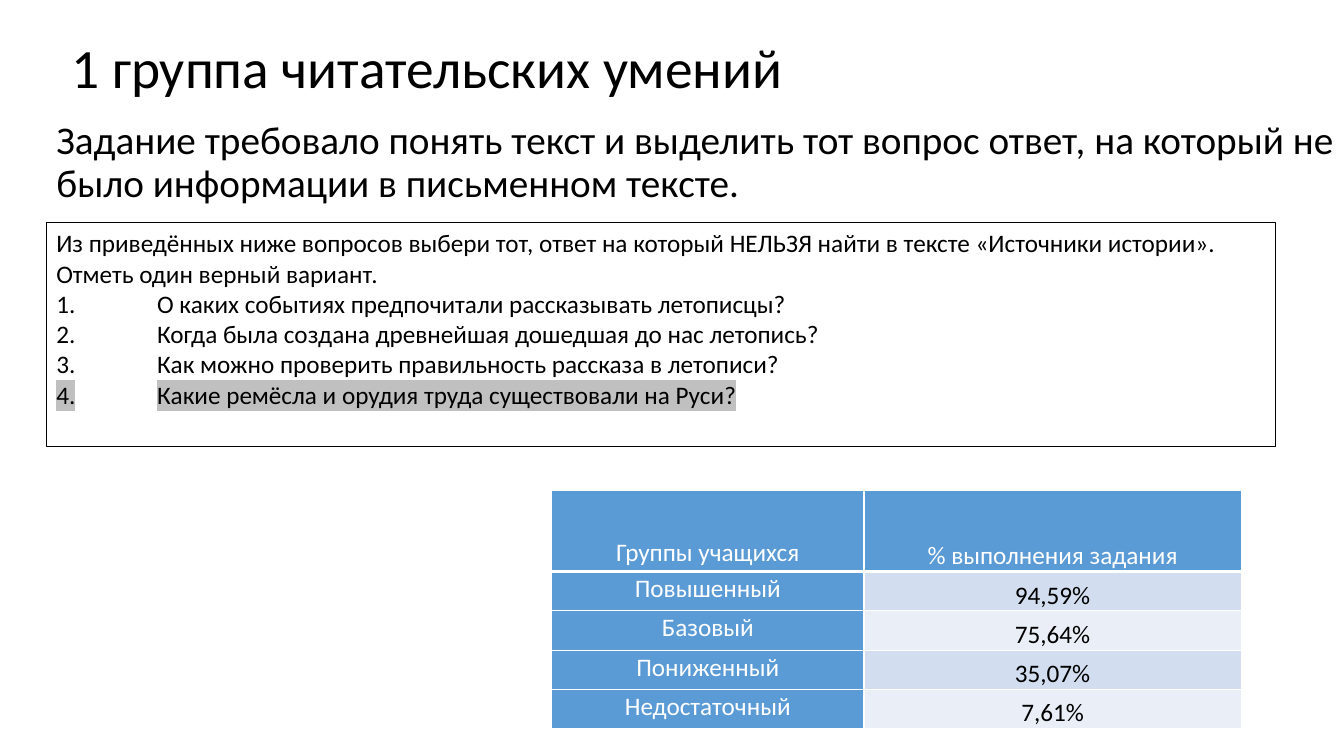
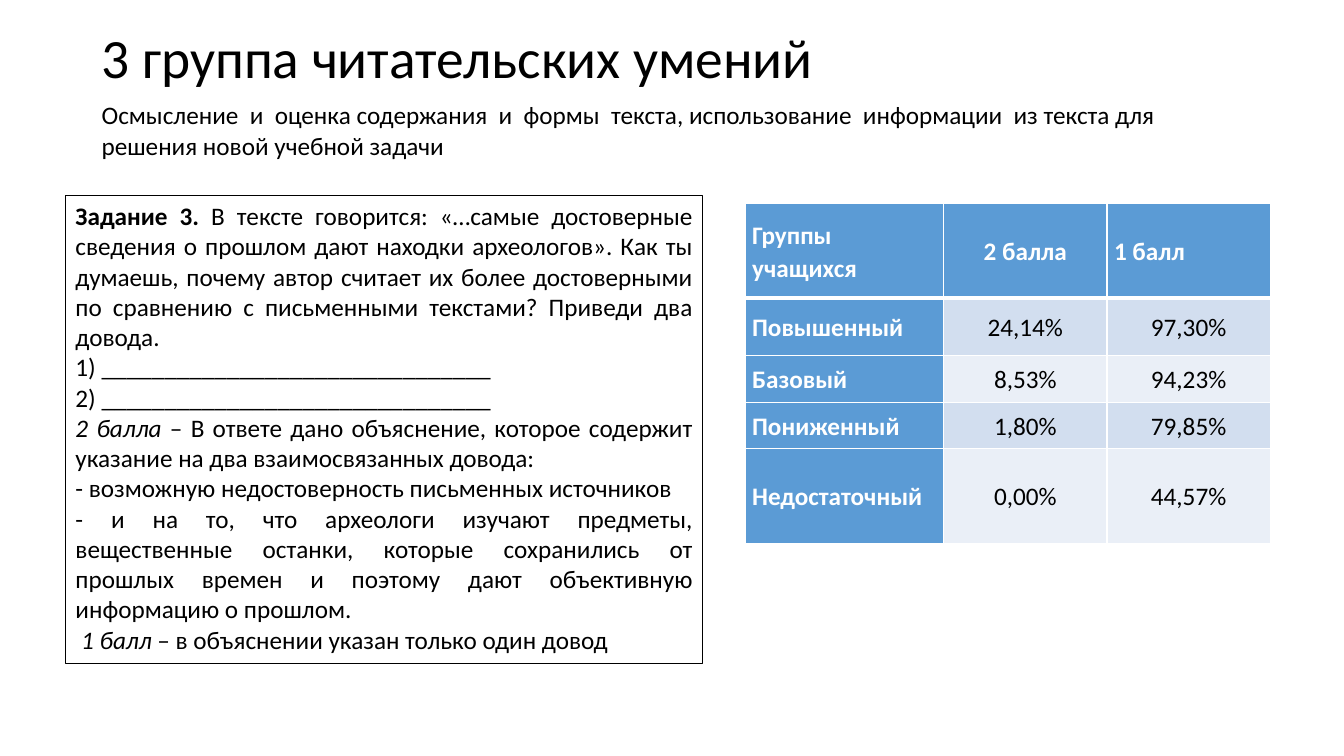
from lxml.etree import SubElement
from pptx import Presentation
from pptx.dml.color import RGBColor
from pptx.enum.text import MSO_ANCHOR, MSO_AUTO_SIZE, PP_ALIGN
from pptx.oxml.ns import qn
from pptx.util import Inches, Pt

FONT = "Calibri"
BLACK, WHITE, BLUE, GREY = "000000", "FFFFFF", "5B9BD5", "C0C0C0"
BANDS = ("D2DEEF", "EAEFF7")
LEFT, CENTER, JUSTIFY = PP_ALIGN.LEFT, PP_ALIGN.CENTER, PP_ALIGN.JUSTIFY
TOP, MIDDLE, BOTTOM = MSO_ANCHOR.TOP, MSO_ANCHOR.MIDDLE, MSO_ANCHOR.BOTTOM


def rgb(value):
    """Turn a hex string into a colour."""
    return RGBColor.from_string(value)


def style(para, size=18, color=BLACK, align=LEFT, bold=False):
    """Set the font and alignment of a paragraph."""
    para.alignment = align
    para.font.name = FONT
    para.font.size = Pt(size)
    para.font.bold = bold
    para.font.color.rgb = rgb(color)


def place(shape, box):
    """Move a shape to a box given in inches."""
    shape.left, shape.top, shape.width, shape.height = map(Inches, box)


def indent(para, left, first):
    """Set the left margin and first line indent of a paragraph."""
    properties = para._p.get_or_add_pPr()
    properties.set("marL", str(Inches(left)))
    properties.set("indent", str(Inches(first)))


def highlight(span, color):
    """Shade the background of a run."""
    span.font.color.rgb = rgb(BLACK)
    mark = SubElement(span._r.get_or_add_rPr(), qn("a:highlight"))
    SubElement(mark, qn("a:srgbClr"), val=color)


def add_title(page, text, box):
    """Fill the title placeholder."""
    title = page.shapes.title
    place(title, box)
    frame = title.text_frame
    frame.auto_size = MSO_AUTO_SIZE.NONE
    frame.vertical_anchor = MIDDLE
    frame.text = text
    para = frame.paragraphs[0]
    style(para, 39.6)
    para.line_spacing = 0.9


def add_lead(page, text, box):
    """Fill the body placeholder with one plain paragraph."""
    body = page.placeholders[1]
    place(body, box)
    frame = body.text_frame
    frame.auto_size = MSO_AUTO_SIZE.NONE
    frame.text = text
    para = frame.paragraphs[0]
    style(para, 28)
    para.line_spacing = 0.9
    para.space_before = Pt(10)
    indent(para, 0, 0)
    para._p.get_or_add_pPr().insert_element_before(
        para._p.makeelement(qn("a:buNone"), {}), "a:tabLst", "a:defRPr", "a:extLst")


def add_text(page, lines, box, align=LEFT, outlined=False):
    """Add a text box from lines, each a list of (text, emphasis) spans."""
    shape = page.shapes.add_textbox(*map(Inches, box))
    if outlined:
        shape.line.color.rgb = rgb(BLACK)
        shape.line.width = Pt(0.75)
    frame = shape.text_frame
    frame.word_wrap = True
    for number, line in enumerate(lines):
        para = frame.add_paragraph() if number else frame.paragraphs[0]
        style(para, align=align)
        for text, emphasis in line:
            span = para.add_run()
            span.text = text
            if emphasis == "bold":
                span.font.bold = True
            elif emphasis == "italic":
                span.font.italic = True
            elif emphasis == "shade":
                highlight(span, GREY)
    return frame


def add_borders(cell, row):
    """Draw white cell borders, thicker under the header row."""
    widths = {"L": 1, "R": 1, "T": 3 if row == 1 else 1, "B": 1 if row else 3}
    for side, width in widths.items():
        line = SubElement(cell._tc.get_or_add_tcPr(), qn(f"a:ln{side}"), w=str(Pt(width)))
        SubElement(SubElement(line, qn("a:solidFill")), qn("a:srgbClr"), val=WHITE)


def add_results(page, rows, left, top, widths, heights, layout):
    """Add a results table; layout gives anchor, alignment and boldness by cell."""
    frame = page.shapes.add_table(len(rows), len(widths), Inches(left), Inches(top),
                                  Inches(sum(widths)), Inches(sum(heights)))
    table = frame.table
    for column, width in zip(table.columns, widths):
        column.width = Inches(width)
    for r, (values, height) in enumerate(zip(rows, heights)):
        table.rows[r].height = Inches(height)
        for c, value in enumerate(values):
            cell = table.cell(r, c)
            label = r == 0 or c == 0
            anchor, align, bold = layout(r, c)
            add_borders(cell, r)
            cell.fill.solid()
            cell.fill.fore_color.rgb = rgb(BLUE if label else BANDS[(r - 1) % 2])
            cell.margin_left = cell.margin_right = Inches(0.07)
            cell.margin_top = cell.margin_bottom = 0
            cell.vertical_anchor = anchor
            cell.text = value
            para = cell.text_frame.paragraphs[0]
            style(para, color=WHITE if label else BLACK, align=align, bold=bold)
            para.line_spacing = 1.07
            para.space_after = Pt(8)
    return table


def build_first_group(deck):
    """Build the slide on the first group of skills."""
    page = deck.slides.add_slide(deck.slide_layouts[1])
    add_title(page, "1 группа читательских умений", (0.61, 0.4, 11.81, 0.6))
    add_lead(page, "Задание требовало понять текст и выделить тот вопрос ответ, "
             "на который не было информации в письменном тексте.", (0.46, 1.15, 12.88, 5.95))
    intro = ("Из приведённых ниже вопросов выбери тот, ответ на который НЕЛЬЗЯ найти "
             "в тексте «Источники истории».", "Отметь один верный вариант.")
    questions = ("О каких событиях предпочитали рассказывать летописцы?",
                 "Когда была создана древнейшая дошедшая до нас летопись?",
                 "Как можно проверить правильность рассказа в летописи?",
                 "Какие ремёсла и орудия труда существовали на Руси?")
    lines = [[(text, "")] for text in intro]
    lines += [[(f"{number}.\t{text}", "shade" if number == 4 else "")]
              for number, text in enumerate(questions, 1)]
    frame = add_text(page, lines, (0.46, 2.21, 12.19, 2.22), outlined=True)
    for para in frame.paragraphs[len(intro):]:
        indent(para, 1, -1)
    rows = [("Группы учащихся", "% выполнения задания"), ("Повышенный", "94,59%"),
            ("Базовый", "75,64%"), ("Пониженный", "35,07%"), ("Недостаточный", "7,61%")]
    table = add_results(page, rows, 5.47, 4.87, (3.1, 3.74), [0.8] + [0.39] * 4,
                        lambda r, c: (BOTTOM if c else TOP, CENTER, False))
    table.cell(0, 0).margin_top = Inches(0.44)


def build_third_group(deck):
    """Build the slide on the third group of skills."""
    page = deck.slides.add_slide(deck.slide_layouts[5])
    add_title(page, "3 группа читательских умений", (0.91, 0.4, 11.51, 0.41))
    add_text(page, [[("Осмысление  и  оценка содержания  и  формы  текста, использование  "
                      "информации  из текста для решения новой учебной задачи", "")]],
             (0.91, 0.94, 11.51, 0.71))
    blank = "_" * 31
    task = [
        [("Задание 3.", "bold"),
         (" В тексте говорится: «…самые достоверные сведения о прошлом дают находки "
          "археологов». Как ты думаешь, почему автор считает их более достоверными по "
          "сравнению с письменными текстами? Приведи два довода.", "")],
        [(f"1) {blank}", "")],
        [(f"2) {blank}", "")],
        [("2 балла", "italic"),
         (" – В ответе дано объяснение, которое содержит указание на два "
          "взаимосвязанных довода:", "")],
        [("- возможную недостоверность письменных источников", "")],
        [("- и на то, что археологи изучают предметы, вещественные останки, которые "
          "сохранились от прошлых времен и поэтому дают объективную информацию о прошлом.", "")],
        [(" ", ""), ("1 балл", "italic"), (" – в объяснении указан только один довод", "")],
    ]
    add_text(page, task, (0.65, 1.94, 6.32, 4.64), JUSTIFY, outlined=True)
    rows = [("Группы учащихся", "2 балла", "1 балл"), ("Повышенный", "24,14%", "97,30%"),
            ("Базовый", "8,53%", "94,23%"), ("Пониженный", "1,80%", "79,85%"),
            ("Недостаточный", "0,00%", "44,57%")]
    add_results(page, rows, 7.39, 2.02, (1.97, 1.62, 1.62), (0.94, 0.57, 0.46, 0.46, 0.94),
                lambda r, c: (MIDDLE, LEFT if c == 0 or (r, c) == (0, 2) else CENTER,
                              r == 0 or c == 0))


def main():
    """Build and save the deck."""
    deck = Presentation()
    deck.slide_width, deck.slide_height = Inches(13.33), Inches(7.5)
    build_first_group(deck)
    build_third_group(deck)
    deck.save("out.pptx")


if __name__ == "__main__":
    main()
